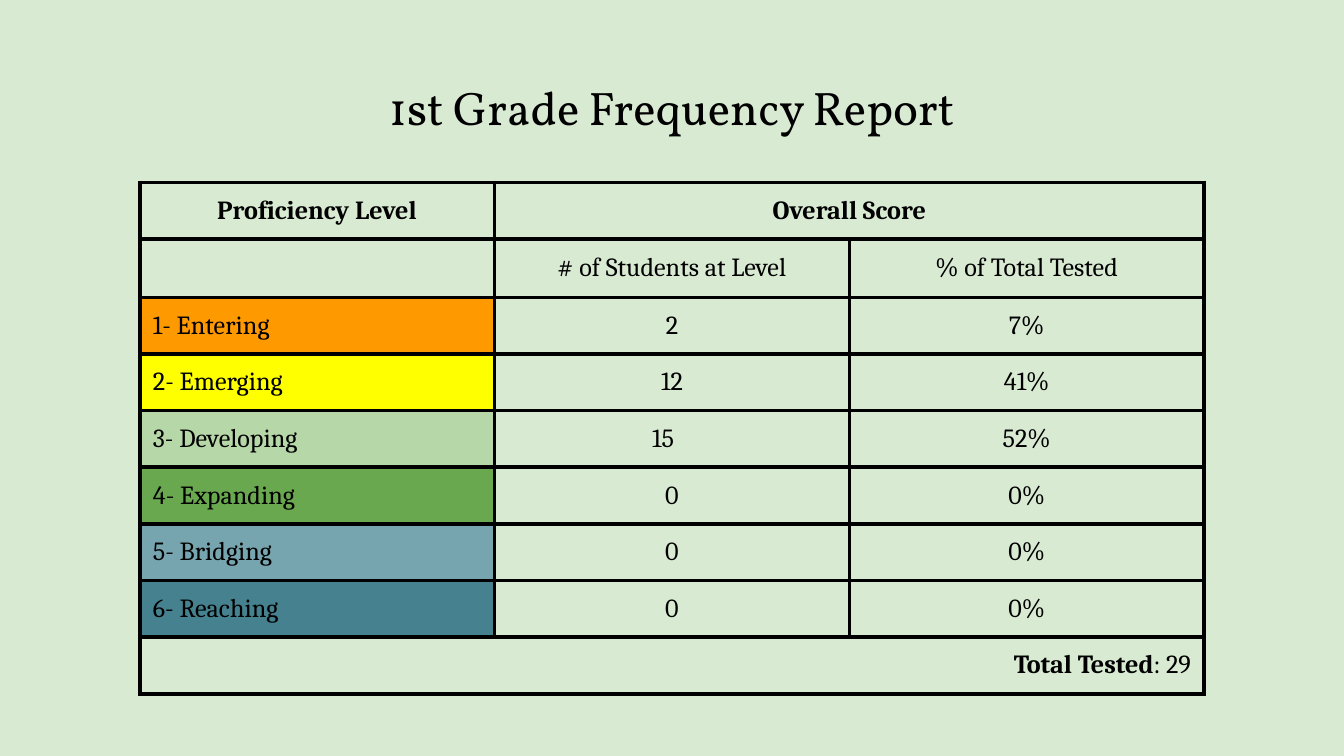
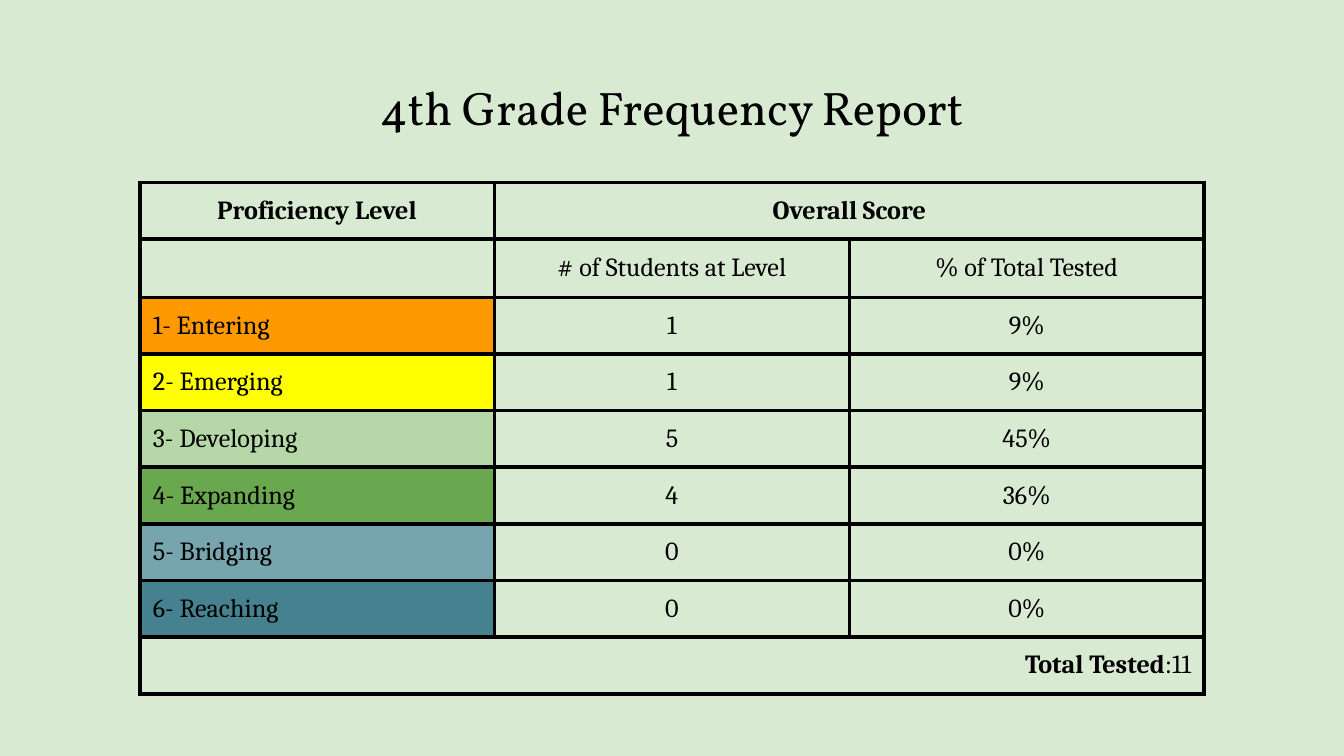
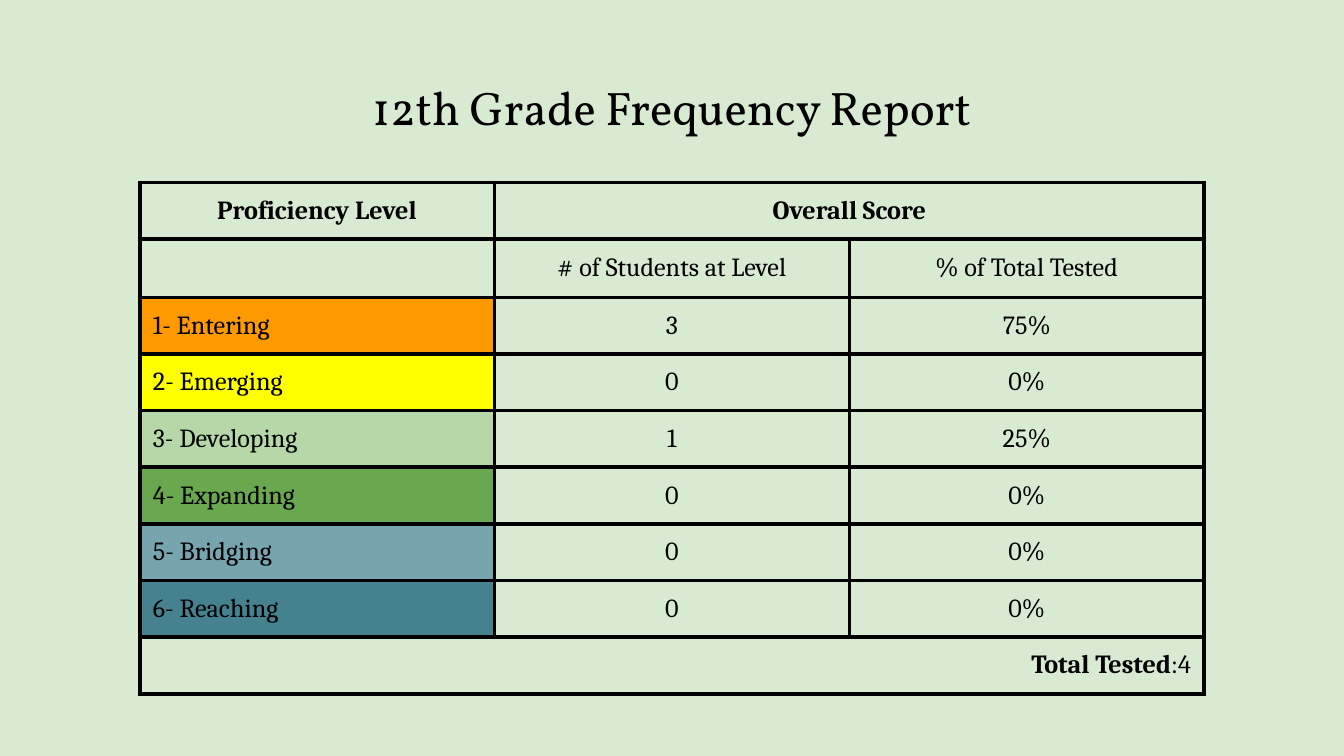
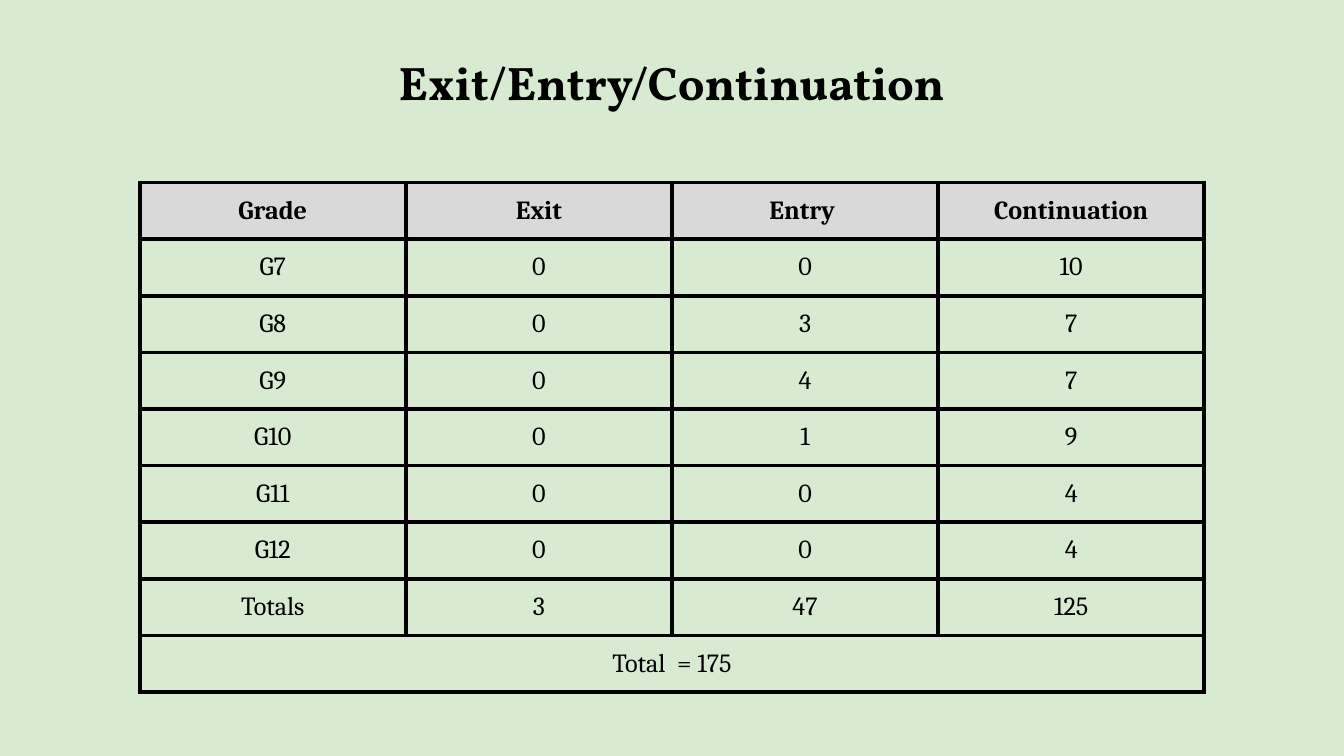
from lxml import etree
from pptx import Presentation
from pptx.dml.color import RGBColor
from pptx.enum.text import MSO_ANCHOR, MSO_AUTO_SIZE, PP_ALIGN
from pptx.oxml.ns import qn
from pptx.util import Cm, Pt

LEFT, CENTER, RIGHT = PP_ALIGN.LEFT, PP_ALIGN.CENTER, PP_ALIGN.RIGHT
TOP, MIDDLE = MSO_ANCHOR.TOP, MSO_ANCHOR.MIDDLE
NO_AUTOFIT = MSO_AUTO_SIZE.NONE
TITLE_ONLY = 5

COLORS = {
    "background": "D9EAD3",
    "ink": "000000",
    "header": "D9D9D9",
    "1- Entering": "FF9900",
    "2- Emerging": "FFFF00",
    "3- Developing": "B6D7A8",
    "4- Expanding": "6AA84F",
    "5- Bridging": "76A5AF",
    "6- Reaching": "45818E",
}
LEVELS = [name for name in COLORS if name[0].isdigit()]
TITLE_FONT, BODY_FONT = "Vollkorn", "Cambria"
TITLE_SIZE, BODY_SIZE = Pt(25.2), Pt(14)
INSET = Cm(0.25)
BORDER = Pt(2.25)
TABLE_LEFT, TABLE_TOP = Cm(2.64), Cm(3.45)
TABLE_WIDTH, TABLE_HEIGHT = Cm(20.12), Cm(9.9)
ROW_HEIGHT = Cm(1.07)

# Grade, students per level, percentages, ending of the total line
REPORTS = [
    ("1st", [2, 12, 15, 0, 0, 0], [7, 41, 52, 0, 0, 0], ": 29"),
    ("4th", [1, 1, 5, 4, 0, 0], [9, 9, 45, 36, 0, 0], ":11"),
    ("12th", [3, 0, 1, 0, 0, 0], [75, 0, 25, 0, 0, 0], ":4"),
]
MOVEMENT = [
    ["Grade", "Exit", "Entry ", "Continuation"],
    ["G7", "0", "0", "10"],
    ["G8", "0", "3", "7"],
    ["G9", "0", "4", "7"],
    ["G10", "0", "1", "9"],
    ["G11", "0", "0", "4"],
    ["G12", "0", "0", "4"],
    ["Totals", "3", "47", "125"],
    ["Total  = 175"],
]


class ReportDeck:
    """Holds the shared style and the current page."""

    def __init__(self):
        self.deck = Presentation()
        self.deck.slide_width = Cm(25.4)
        self.deck.slide_height = Cm(14.29)
        self.page = None

    def color(self, name):
        return RGBColor.from_string(COLORS[name])

    def format_span(self, span, font, size, bold=False):
        span.font.name = font
        span.font.size = size
        span.font.bold = bold
        span.font.color.rgb = self.color("ink")

    def set_insets(self, box):
        box.margin_left = box.margin_right = INSET
        box.margin_top = box.margin_bottom = INSET

    def add_page(self, title, top, bold=False):
        self.page = self.deck.slides.add_slide(self.deck.slide_layouts[TITLE_ONLY])
        fill = self.page.background.fill
        fill.solid()
        fill.fore_color.rgb = self.color("background")

        box = self.page.shapes.title
        box.left, box.top, box.width, box.height = Cm(0.86), top, Cm(23.67), Cm(1.6)
        frame = box.text_frame
        frame.text = title
        frame.word_wrap = True
        frame.auto_size = NO_AUTOFIT
        frame.vertical_anchor = TOP
        self.set_insets(frame)
        paragraph = frame.paragraphs[0]
        paragraph.alignment = CENTER
        self.format_span(paragraph.runs[0], TITLE_FONT, TITLE_SIZE, bold)

    def add_table(self, rows):
        """Draw the rows; the last text of a short row spans the rest."""
        columns = max(len(texts) for texts in rows)
        frame = self.page.shapes.add_table(
            len(rows), columns, TABLE_LEFT, TABLE_TOP, TABLE_WIDTH, TABLE_HEIGHT)
        table = frame.table
        table.first_row = table.horz_banding = False
        for row in table.rows:
            row.height = ROW_HEIGHT
        frame.height = TABLE_HEIGHT

        for index, texts in enumerate(rows):
            last = len(texts) - 1
            if last < columns - 1:
                table.cell(index, last).merge(table.cell(index, columns - 1))
            for column in range(columns):
                text = texts[column] if column <= last else ""
                self.fill_cell(table.cell(index, column), text, bold=index == 0)
        return table

    def fill_cell(self, cell, text, bold):
        self.set_insets(cell)
        self.add_borders(cell)
        cell.fill.background()
        paragraph = cell.text_frame.paragraphs[0]
        if text:
            paragraph.text = text
            paragraph.alignment = CENTER
            self.format_span(paragraph.runs[0], BODY_FONT, BODY_SIZE, bold)
        else:
            # Keep empty cells from stretching their row
            etree.SubElement(paragraph._p, qn("a:endParaRPr"),
                             sz=str(int(BODY_SIZE.pt * 100)))

    def add_borders(self, cell):
        properties = cell._tc.get_or_add_tcPr()
        for side in ("a:lnL", "a:lnR", "a:lnT", "a:lnB"):
            line = etree.SubElement(properties, qn(side), w=str(BORDER))
            paint = etree.SubElement(line, qn("a:solidFill"))
            etree.SubElement(paint, qn("a:srgbClr"), val=COLORS["ink"])

    def shade(self, cell, name):
        cell.fill.solid()
        cell.fill.fore_color.rgb = self.color(name)

    def align(self, cell, alignment):
        cell.text_frame.paragraphs[0].alignment = alignment

    def add_frequency_report(self, grade, counts, percents, total):
        self.add_page(f"{grade} Grade Frequency Report", Cm(1.24))
        rows = [["Proficiency Level", "Overall Score"],
                ["", "# of Students at Level", "% of Total Tested"]]
        for level, count, percent in zip(LEVELS, counts, percents):
            rows.append([level, str(count), f"{percent}%"])
        rows.append(["Total Tested"])
        table = self.add_table(rows)

        for row, column in ((0, 1), (1, 1), (1, 2)):
            table.cell(row, column).vertical_anchor = MIDDLE
        for row, level in enumerate(LEVELS, start=2):
            self.shade(table.cell(row, 0), level)
            self.align(table.cell(row, 0), LEFT)

        # Total line: bold label, plain number
        total_cell = table.cell(len(rows) - 1, 0)
        self.align(total_cell, RIGHT)
        paragraph = total_cell.text_frame.paragraphs[0]
        paragraph.runs[0].font.bold = True
        span = paragraph.add_run()
        span.text = total
        self.format_span(span, BODY_FONT, BODY_SIZE)
        return table

    def add_movement_page(self):
        self.add_page("Exit/Entry/Continuation", Cm(0.76), bold=True)
        table = self.add_table(MOVEMENT)
        for column in range(len(MOVEMENT[0])):
            self.shade(table.cell(0, column), "header")


def main():
    report = ReportDeck()

    # Frequency reports by grade
    tables = [report.add_frequency_report(*values) for values in REPORTS]

    # The first grade's Developing count is indented from the left
    developing = tables[0].cell(4, 1)
    report.align(developing, LEFT)
    developing.margin_left = Cm(2.98)

    # Exit, entry and continuation
    report.add_movement_page()

    report.deck.save("out.pptx")


if __name__ == "__main__":
    main()
